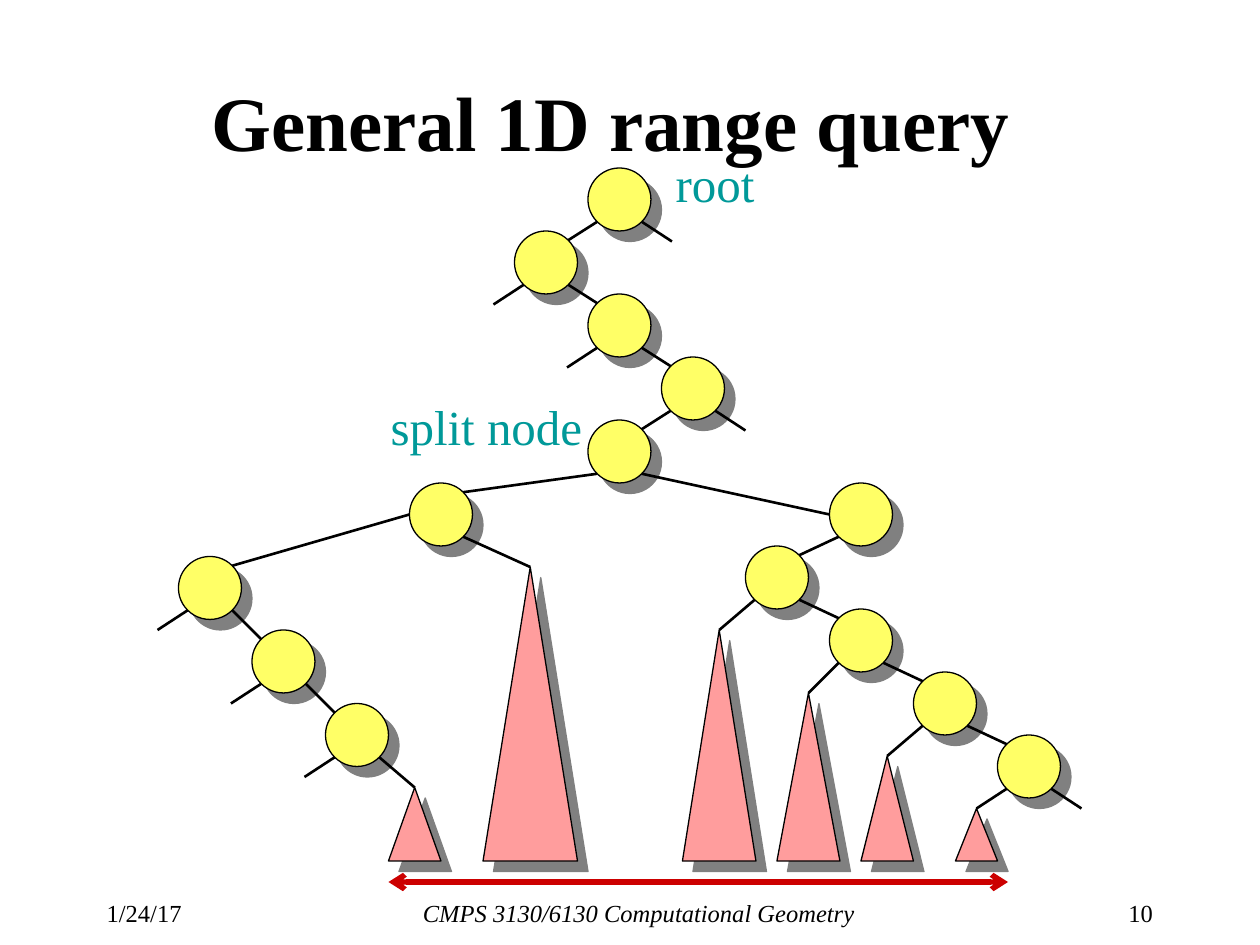
import dataclasses

import pptx
import pptx.dml.color
import pptx.enum.shapes
import pptx.enum.text
import pptx.oxml
import pptx.oxml.ns
import pptx.util

Cm = pptx.util.Cm
Pt = pptx.util.Pt
SHAPE = pptx.enum.shapes.MSO_SHAPE
ALIGN = pptx.enum.text.PP_ALIGN
ANCHOR = pptx.enum.text.MSO_ANCHOR


@dataclasses.dataclass(frozen=True)
class Theme:
    font: str = "Times New Roman"
    ink: str = "000000"
    label: str = "009999"
    node: str = "FFFF66"
    subtree: str = "FF9D9D"
    shadow: str = "808080"
    query: str = "CC0000"
    title_size: int = 44
    label_size: int = 28
    footer_size: int = 14
    outline: float = 0.75
    edge: float = 1.5
    arrow: float = 3
    shadow_distance: float = 8.5


THEME = Theme()

RADIUS = 3
DIAGONAL = RADIUS * 0.5 ** 0.5
BASELINE = 82
PORTS = {
    "bottom left": (-DIAGONAL, DIAGONAL),
    "bottom right": (DIAGONAL, DIAGONAL),
    "top left": (-DIAGONAL, -DIAGONAL),
    "top right": (DIAGONAL, -DIAGONAL),
    "left": (-RADIUS, 0),
}

NODES = {
    "root": (59, 19),
    "path 1": (52, 25),
    "path 2": (59, 31),
    "path 3": (66, 37),
    "split": (59, 43),
    "low 1": (42, 49),
    "low 2": (20, 56),
    "low 3": (27, 63),
    "low 4": (34, 70),
    "high 1": (82, 49),
    "high 2": (74, 55),
    "high 3": (82, 61),
    "high 4": (90, 67),
    "high 5": (98, 73),
}

EDGES = [
    ("root", "bottom left", "path 1", "top right"),
    ("path 1", "bottom right", "path 2", "top left"),
    ("path 2", "bottom right", "path 3", "top left"),
    ("path 3", "bottom left", "split", "top right"),
    ("split", "bottom left", "low 1", "top right"),
    ("low 1", "left", "low 2", "top right"),
    ("low 2", "bottom right", "low 3", "top left"),
    ("low 3", "bottom right", "low 4", "top left"),
    ("split", "bottom right", "high 1", "left"),
    ("high 1", "bottom left", "high 2", "top right"),
    ("high 2", "bottom right", "high 3", "top left"),
    ("high 3", "bottom right", "high 4", "top left"),
    ("high 4", "bottom right", "high 5", "top left"),
]

OPEN_BRANCHES = [
    ("root", "right"), ("path 1", "left"), ("path 2", "left"),
    ("path 3", "right"), ("low 2", "left"), ("low 3", "left"),
    ("low 4", "left"), ("high 5", "right"),
]

SUBTREES = [
    ("low 1", "right", 50.5, 54, 9),
    ("low 4", "right", 39.5, 75, 5),
    ("high 2", "left", 68.5, 60, 7),
    ("high 3", "left", 77, 66, 6),
    ("high 4", "left", 84.5, 72, 5),
    ("high 5", "left", 93, 77, 4),
]


def grid(steps):
    return Cm(steps * 2.54 / 12)


def rgb(value):
    return pptx.dml.color.RGBColor.from_string(value)


def xml(body):
    return pptx.oxml.parse_xml(body.replace("/>", f' {pptx.oxml.ns.nsdecls("a")}/>', 1)
                               if body.endswith("/>") and body.count("<") == 1
                               else body.replace(">", f' {pptx.oxml.ns.nsdecls("a")}>', 1))


def add_solid(slide, preset, left, top, width, height, fill):
    solid = slide.shapes.add_shape(preset, *map(grid, (left, top, width, height)))
    solid.fill.solid()
    solid.fill.fore_color.rgb = rgb(fill)
    solid.line.color.rgb = rgb(THEME.ink)
    solid.line.width = Pt(THEME.outline)
    solid.shadow.inherit = False
    effects = solid._element.spPr.find(pptx.oxml.ns.qn("a:effectLst"))
    effects.append(xml(
        f'<a:outerShdw dist="{Pt(THEME.shadow_distance)}" dir="2700000" '
        f'algn="ctr" rotWithShape="0"><a:srgbClr val="{THEME.shadow}"/></a:outerShdw>'))


def add_line(slide, start, end, color=THEME.ink, width=THEME.edge):
    line = slide.shapes.add_connector(
        pptx.enum.shapes.MSO_CONNECTOR.STRAIGHT, *map(grid, (*start, *end)))
    line.line.color.rgb = rgb(color)
    line.line.width = Pt(width)
    line._element.spPr.append(xml("<a:effectLst/>"))
    return line


def add_query_range(slide, start, end):
    query = add_line(slide, start, end, THEME.query, THEME.arrow)
    outline = query.line._get_or_add_ln()
    for tip in ("headEnd", "tailEnd"):
        outline.append(xml(f'<a:{tip} type="arrow"/>'))


def add_text(slide, text, box, size, color=THEME.ink, align=ALIGN.LEFT,
             anchor=ANCHOR.TOP, wrap=True, bold=False, italic=False):
    frame = slide.shapes.add_textbox(*map(Cm, box)).text_frame
    frame.text = text
    frame.word_wrap = wrap
    frame.vertical_anchor = anchor
    paragraph = frame.paragraphs[0]
    paragraph.alignment = align
    font = paragraph.runs[0].font
    font.name = THEME.font
    font.size = Pt(size)
    font.color.rgb = rgb(color)
    font.bold = bold
    font.italic = italic


def port(node, side):
    return tuple(c + offset for c, offset in zip(NODES[node], PORTS[side]))


def add_tree(slide):
    for x, y in NODES.values():
        add_solid(slide, SHAPE.OVAL, x - RADIUS, y - RADIUS,
                  2 * RADIUS, 2 * RADIUS, THEME.node)
    for parent, side, x, top, width in SUBTREES:
        add_solid(slide, SHAPE.ISOSCELES_TRIANGLE, x - width / 2, top,
                  width, BASELINE - top, THEME.subtree)
        add_line(slide, port(parent, f"bottom {side}"), (x, top))
    for parent, exit_side, child, entry_side in EDGES:
        add_line(slide, port(parent, exit_side), port(child, entry_side))
    for node, side in OPEN_BRANCHES:
        x, y = NODES[node]
        reach = 5 if side == "right" else -5
        add_line(slide, port(node, f"bottom {side}"), (x + reach, y + 4))


def main():
    deck = pptx.Presentation()
    deck.slide_width, deck.slide_height = Cm(25.4), Cm(19.05)
    slide = deck.slides.add_slide(deck.slide_layouts[6])

    add_text(slide, "General 1D range query", (4.02, 0.85, 20.96, 3.18),
             THEME.title_size, anchor=ANCHOR.MIDDLE, bold=True)
    add_tree(slide)
    for label, box in (("root", (13.36, 2.97, 2.11, 1.45)),
                       ("split node", (7.62, 7.87, 4.37, 1.45))):
        add_text(slide, label, box, THEME.label_size, THEME.label,
                 ALIGN.CENTER, wrap=False)
    add_query_range(slide, (37, 84), (96, 84))

    for text, left, width, align, italic in (
            ("1/24/17", 1.9, 2.41, ALIGN.LEFT, False),
            ("10", 21.41, 2.08, ALIGN.RIGHT, False),
            ("CMPS 3130/6130 Computational Geometry", 4.83, 16.1, ALIGN.CENTER, True)):
        add_text(slide, text, (left, 17.98, width, 0.64), THEME.footer_size,
                 align=align, italic=italic)
    deck.save("out.pptx")


if __name__ == "__main__":
    main()
